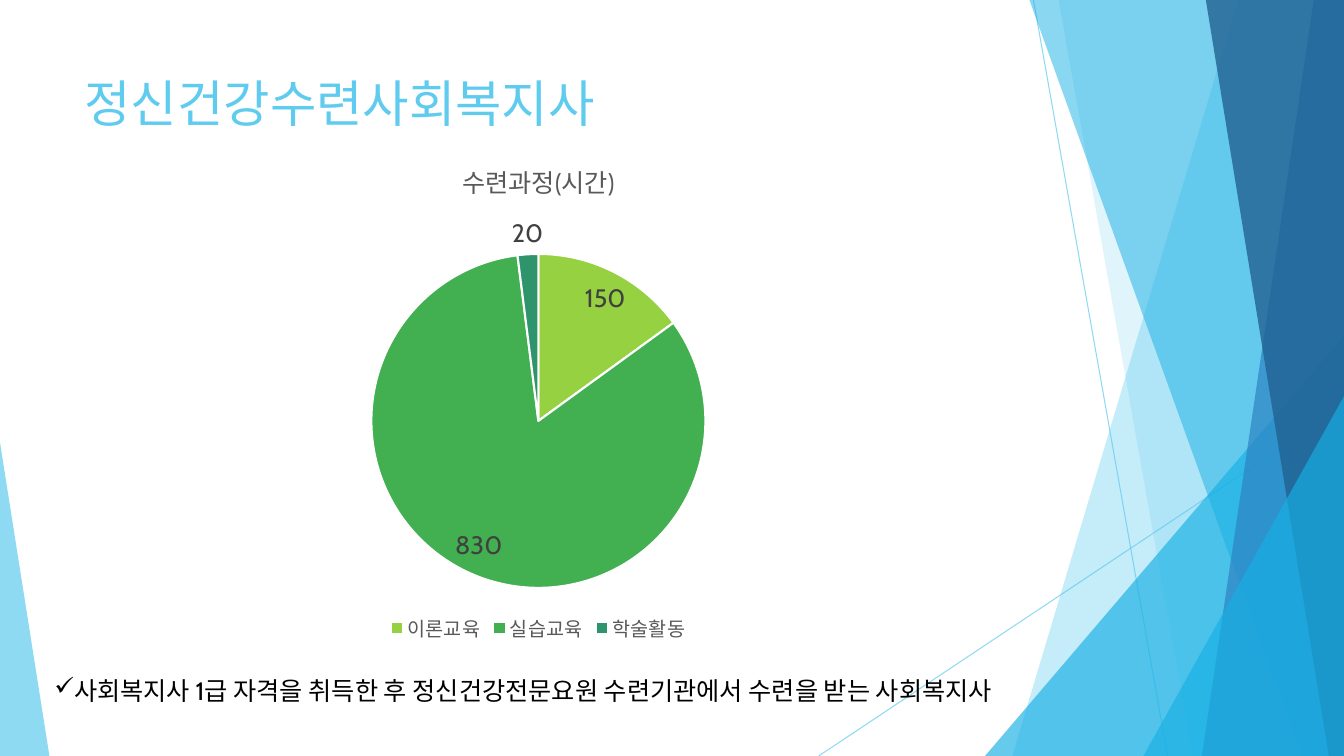
import pptx
import pptx.chart.data
import pptx.dml.color
import pptx.enum.chart
import pptx.enum.shapes
import pptx.enum.text
import pptx.oxml
import pptx.oxml.ns
import pptx.util
from pptx.util import Inches

WIDTH, HEIGHT = 13.33, 7.5
SKY, CYAN, BLUE, NAVY = "5FCBEF", "17B0E4", "2E83C3", "226292"
BLACK, WHITE, GRAY, DARK = "000000", "FFFFFF", "595959", "404040"


def color(value):
    return pptx.dml.color.RGBColor.from_string(value)


def add_xml(parent, tag, **attributes):
    element = pptx.oxml.parse_xml(f"<{tag} {pptx.oxml.ns.nsdecls(tag.split(':')[0])}/>")
    for name, value in attributes.items():
        element.set(name, str(value))
    parent.append(element)
    return element


class SlideBuilder:
    font_name = "Cabin"

    def __init__(self, slide):
        self.slide = slide
        self.shapes = slide.shapes

    def set_font(self, font, size, value):
        font.name = self.font_name
        font.size = pptx.util.Pt(size)
        font.color.rgb = color(value)
        font.bold = False

    def set_opacity(self, fill_element, percent):
        add_xml(fill_element.find(".//" + pptx.oxml.ns.qn("a:srgbClr")),
                "a:alpha", val=percent * 1000)

    def paint(self, shape, value, opacity):
        shape.shadow.inherit = False
        shape.fill.solid()
        shape.fill.fore_color.rgb = color(value)
        shape.line.fill.background()
        self.set_opacity(shape.element.spPr, opacity)

    def line(self, start, end):
        connector = self.shapes.add_connector(
            pptx.enum.shapes.MSO_CONNECTOR.STRAIGHT,
            *(Inches(length) for length in start + end))
        connector.line.color.rgb = color(SKY)
        connector.line.width = pptx.util.Pt(0.75)
        self.set_opacity(connector.element.spPr, 70)
        add_xml(connector.element.spPr, "a:effectLst")

    def band(self, top_left, bottom_left, value, opacity):
        builder = self.shapes.build_freeform(Inches(top_left), 0)
        corners = [(WIDTH, 0), (WIDTH, HEIGHT), (bottom_left, HEIGHT)]
        builder.add_line_segments([(Inches(x), Inches(y)) for x, y in corners], close=True)
        self.paint(builder.convert_to_shape(), value, opacity)

    def corner(self, left, top, width, apex, value, opacity):
        triangle = self.shapes.add_shape(
            pptx.enum.shapes.MSO_SHAPE.ISOSCELES_TRIANGLE,
            Inches(left), Inches(top), Inches(width), Inches(HEIGHT - top))
        triangle.adjustments[0] = apex
        self.paint(triangle, value, opacity)

    def text(self, left, top, width, height, content, size, value, bullet=None):
        box = self.shapes.add_textbox(Inches(left), Inches(top), Inches(width), Inches(height))
        box.text_frame.word_wrap = True
        box.text_frame.vertical_anchor = pptx.enum.text.MSO_ANCHOR.TOP
        paragraph = box.text_frame.paragraphs[0]
        paragraph.text = content
        self.set_font(paragraph.font, size, value)
        if bullet:
            properties = paragraph._p.get_or_add_pPr()
            properties.set("marL", "0")
            properties.set("indent", "0")
            properties.insert(0, add_xml(properties, "a:buChar", char=bullet))

    def pie(self, left, top, width, height, title, hours, slice_colors, plot_area):
        data = pptx.chart.data.CategoryChartData()
        data.categories = list(hours)
        data.add_series(title, list(hours.values()))
        chart = self.shapes.add_chart(
            pptx.enum.chart.XL_CHART_TYPE.PIE,
            Inches(left), Inches(top), Inches(width), Inches(height), data).chart
        self.set_font(chart.font, 10, BLACK)

        chart.has_title = True
        heading = chart.chart_title.text_frame.paragraphs[0]
        heading.text = title
        self.set_font(heading.font, 18, GRAY)
        chart.chart_title.include_in_layout = False

        chart.has_legend = True
        chart.legend.position = pptx.enum.chart.XL_LEGEND_POSITION.BOTTOM
        chart.legend.include_in_layout = False
        self.set_font(chart.legend.font, 14, GRAY)

        plot = chart.plots[0]
        plot.vary_by_categories = True
        for index, value in enumerate(slice_colors):
            point_format = plot.series[0].points[index].format
            point_format.fill.solid()
            point_format.fill.fore_color.rgb = color(value)
            point_format.line.color.rgb = color(WHITE)
            point_format.line.width = pptx.util.Pt(1.5)

        labels = plot.series[0].data_labels
        labels.show_value = True
        labels.position = pptx.enum.chart.XL_LABEL_POSITION.BEST_FIT
        self.set_font(labels.font, 18, DARK)

        area = chart._chartSpace.chart.plotArea
        for layout in area.findall(pptx.oxml.ns.qn("c:layout")):
            area.remove(layout)
        layout = add_xml(area, "c:layout")
        area.insert(0, layout)
        manual = add_xml(layout, "c:manualLayout")
        add_xml(manual, "c:layoutTarget", val="inner")
        for name in ("xMode", "yMode"):
            add_xml(manual, f"c:{name}", val="edge")
        for name, value in zip("xywh", plot_area):
            add_xml(manual, f"c:{name}", val=value)


def main():
    presentation = pptx.Presentation()
    presentation.slide_width = Inches(WIDTH)
    presentation.slide_height = Inches(HEIGHT)
    builder = SlideBuilder(presentation.slides.add_slide(presentation.slide_layouts[6]))

    builder.line((10.25, 0), (11.58, HEIGHT))
    builder.line((WIDTH, 4.03), (8.12, HEIGHT))
    builder.band(12.28, 10.04, SKY, 36)
    builder.band(10.5, 11.83, SKY, 20)
    builder.corner(9.77, 3.33, 3.56, 1, CYAN, 66)
    builder.band(10.21, 12.91, CYAN, 50)
    builder.band(13.03, 11.92, BLUE, 70)
    builder.band(11.96, 13.18, NAVY, 80)
    builder.corner(11.34, 3.93, 1.99, 1, CYAN, 66)
    builder.corner(0, 4.39, 0.49, 0, SKY, 70)

    builder.text(0.74, 0.67, 9.4, 1.44, "정신건강수련사회복지사", 36, SKY)
    builder.pie(0.44, 1.39, 9.8, 5.02, "수련과정(시간)",
                {"이론교육": 150, "실습교육": 830, "학술활동": 20},
                ["96D141", "42B051", "2E946B"], (0.33, 0.225, 0.34, 0.66))
    builder.text(0.44, 6.65, 12.35, 0.4,
                 "사회복지사 1급 자격을 취득한 후 정신건강전문요원 수련기관에서 수련을 받는 사회복지사",
                 18, BLACK, bullet="✓")

    presentation.save("out.pptx")


if __name__ == "__main__":
    main()
